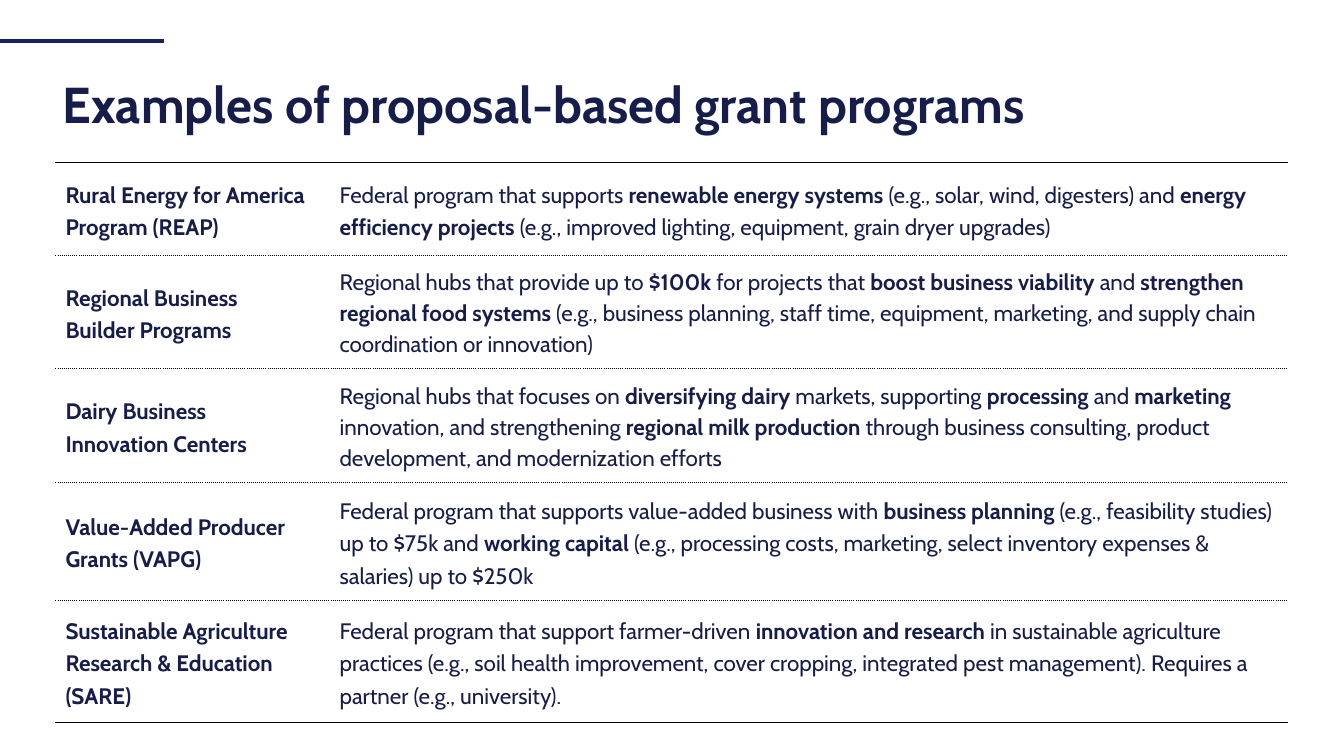
"""Build a slide that lists proposal-based grant programs in a ruled table."""
import pptx
import pptx.util
import pptx.dml.color
import pptx.enum.shapes
import pptx.enum.text
import pptx.oxml.ns
import lxml.etree

Pt = pptx.util.Pt
MIDDLE = pptx.enum.text.MSO_ANCHOR.MIDDLE
LEFT = pptx.enum.text.PP_ALIGN.LEFT

TITLE = "Examples of proposal-based grant programs"
FONT = "Cabin"
NAVY = "171D4B"
ACCENT = "15235F"
BLACK = "000000"

# Asterisks switch bold on and off; a newline breaks the line.
ROWS = [
    (66.2, 1.2, "*Rural Energy for America Program (REAP)*",
     "Federal program that supports *renewable energy systems* (e.g., solar, wind, "
     "digesters) and *energy efficiency projects *(e.g., improved lighting, equipment, "
     "grain dryer upgrades)"),
    (80, 1.15, "*Regional Business\nBuilder Programs*",
     "Regional hubs that provide up to *$100k* for projects that *boost business "
     "viability *and *strengthen regional food systems* (e.g., business planning, staff "
     "time, equipment, marketing, and supply chain coordination or innovation)"),
    (80, 1.15, "*Dairy Business\nInnovation Centers*",
     "Regional hubs that focuses on *diversifying dairy* markets, supporting "
     "*processing *and *marketing *innovation, and strengthening *regional milk "
     "production* through business consulting, product development, and modernization "
     "efforts"),
    (82.8, 1.2, "*Value-Added Producer\nGrants (VAPG)*",
     "Federal program that supports value-added business with *business planning* "
     "(e.g., feasibility studies) up to $75k and *working capital* (e.g., processing "
     "costs, marketing, select inventory expenses & salaries) up to $250k"),
    (87.8, 1.2, "*Sustainable Agriculture Research & Education (SARE)*",
     "Federal program that support farmer-driven *innovation and research* in "
     "sustainable agriculture practices (e.g., soil health improvement, cover cropping, "
     "integrated pest management). Requires a partner (e.g., university)."),
]
COLS = [195.8, 684.7]
LEFT_X, TOP_Y = 39.6, 116
INSET = 7.2


def color(text):
    """Turn a hex string into a color."""
    return pptx.dml.color.RGBColor.from_string(text)


def write(frame, text, size=16, tint=NAVY, space=1.2):
    """Fill a text frame with marked-up text."""
    frame.word_wrap = True
    para = frame.paragraphs[0]
    para.alignment = LEFT
    para.line_spacing = space
    for spot, part in enumerate(text.split("*")):
        for row, line in enumerate(part.split("\n")):
            if row:
                para.add_line_break()
            if line:
                run = para.add_run()
                run.text = line
                run.font.name = FONT
                run.font.size = Pt(size)
                run.font.bold = spot % 2 == 1
                run.font.color.rgb = color(tint)


def rule(cell, spot, side, width=0, dash="solid"):
    """Set one cell border; zero width means none."""
    props = cell._tc.get_or_add_tcPr()
    line = lxml.etree.Element(pptx.oxml.ns.qn("a:ln" + side), w=str(Pt(width)))
    props.insert(spot, line)
    if not width:
        lxml.etree.SubElement(line, pptx.oxml.ns.qn("a:noFill"))
        return
    fill = lxml.etree.SubElement(line, pptx.oxml.ns.qn("a:solidFill"))
    lxml.etree.SubElement(fill, pptx.oxml.ns.qn("a:srgbClr"), val=BLACK)
    lxml.etree.SubElement(line, pptx.oxml.ns.qn("a:prstDash"), val=dash)


def add_bar(slide):
    """Draw the accent line at the top left."""
    bar = slide.shapes.add_connector(
        pptx.enum.shapes.MSO_CONNECTOR.STRAIGHT, Pt(0), Pt(29.5), Pt(117), Pt(29.5))
    bar.line.color.rgb = color(ACCENT)
    bar.line.width = Pt(3)
    lxml.etree.SubElement(bar._element.spPr, pptx.oxml.ns.qn("a:effectLst"))


def add_title(slide):
    """Place and fill the title."""
    title = slide.shapes.title
    title.left, title.top = Pt(37.5), Pt(52.5)
    title.width, title.height = Pt(880.5), Pt(47.5)
    title.text_frame.vertical_anchor = MIDDLE
    title.text_frame.auto_size = pptx.enum.text.MSO_AUTO_SIZE.NONE
    write(title.text_frame, f"*{TITLE}*", size=36, space=0.9)


def add_grid(slide):
    """Build the table of programs."""
    tall = sum(row[0] for row in ROWS)
    grid = slide.shapes.add_table(
        len(ROWS), len(COLS), Pt(LEFT_X), Pt(TOP_Y), Pt(sum(COLS)), Pt(tall)).table
    grid.first_row = grid.horz_banding = False
    for col, width in zip(grid.columns, COLS):
        col.width = Pt(width)
    edge, inner = (1, "solid"), (0.25, "sysDot")
    last = len(ROWS) - 1
    for num, (height, space, name, about) in enumerate(ROWS):
        grid.rows[num].height = Pt(height)
        for col, (text, gap) in enumerate([(name, 1.2), (about, space)]):
            cell = grid.cell(num, col)
            cell.vertical_anchor = MIDDLE
            cell.margin_left = cell.margin_right = Pt(INSET)
            cell.margin_top = cell.margin_bottom = Pt(INSET)
            cell.fill.background()
            rule(cell, 0, "L")
            rule(cell, 1, "R")
            rule(cell, 2, "T", *(edge if num == 0 else inner))
            rule(cell, 3, "B", *(edge if num == last else inner))
            write(cell.text_frame, text, space=gap)


def main():
    """Make and save the deck."""
    deck = pptx.Presentation()
    deck.slide_width, deck.slide_height = Pt(960), Pt(540)
    slide = deck.slides.add_slide(deck.slide_layouts[5])
    add_bar(slide)
    add_title(slide)
    add_grid(slide)
    deck.save("out.pptx")


if __name__ == "__main__":
    main()
